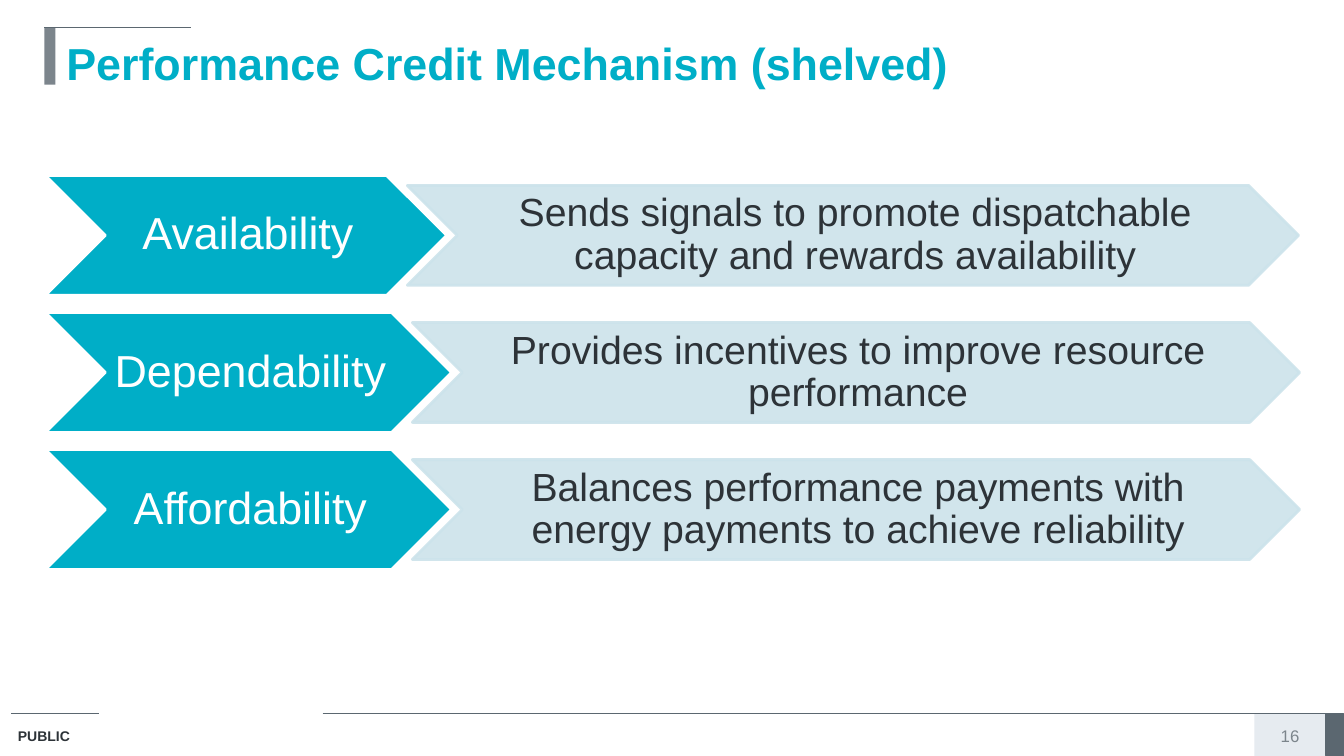
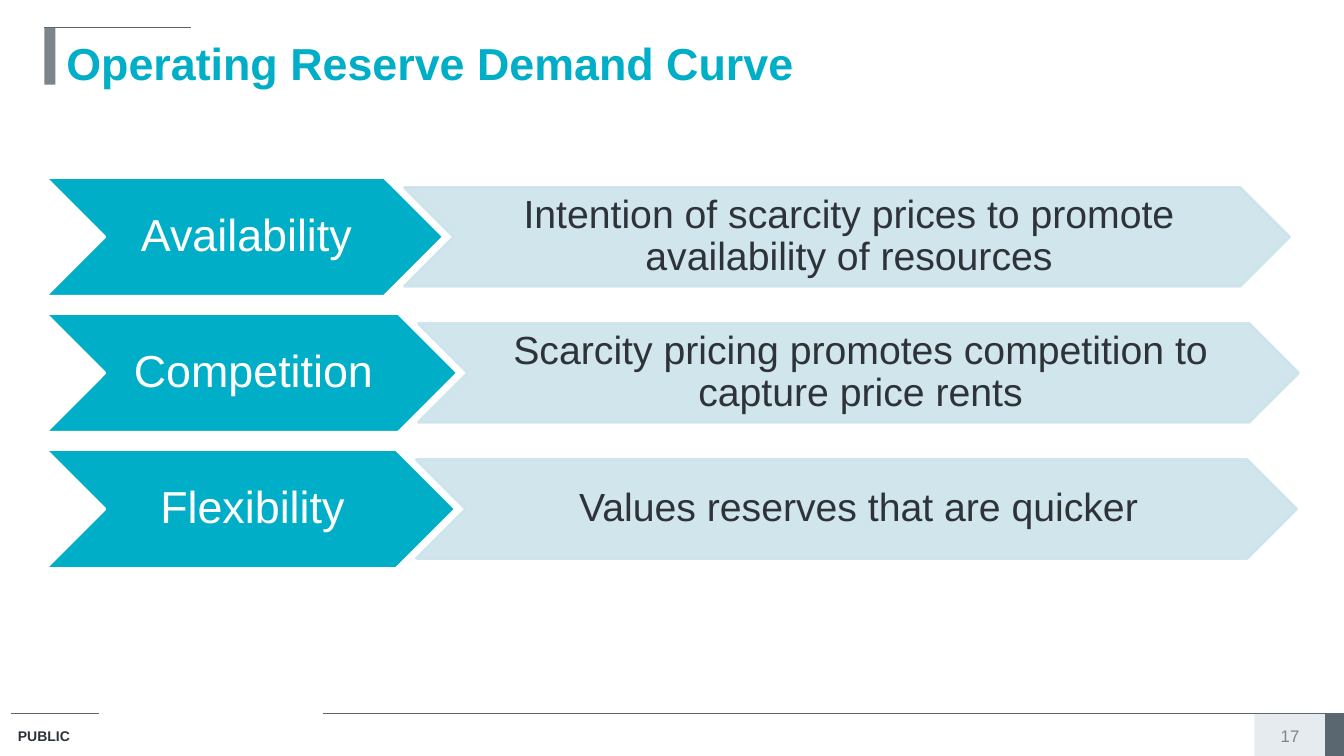
from pptx import Presentation
from pptx.dml.color import RGBColor
from pptx.enum.shapes import MSO_CONNECTOR, MSO_SHAPE
from pptx.enum.text import MSO_ANCHOR, PP_ALIGN
from pptx.oxml.ns import qn
from pptx.util import Pt
from lxml import etree

RECT, CHEV = MSO_SHAPE.RECTANGLE, MSO_SHAPE.CHEVRON
LINE = MSO_CONNECTOR.STRAIGHT
TOP, MID = MSO_ANCHOR.TOP, MSO_ANCHOR.MIDDLE
LEFT, MIDDLE = PP_ALIGN.LEFT, PP_ALIGN.CENTER

SCALE = 9144  # 100 px to the inch
WIDE, HIGH = 1333, 750
FONT = "Arial"
TEAL, PALE, WHITE = "00AEC7", "CCE3EB", "FFFFFF"
INK, SLATE, GRAY, MIST = "2D3338", "5B6770", "7C858C", "E6EBF0"

# Each row: label, label width, detail, detail width
SLIDES = [
    ("Performance Credit Mechanism (shelved)", 16, (45, 174, 119, 136), [
        ("Availability", 398,
         "Sends signals to promote dispatchable capacity and rewards availability", 884),
        ("Dependability", 403,
         "Provides incentives to improve resource performance", 880),
        ("Affordability", 403,
         "Balances performance payments with energy payments to achieve reliability", 880),
    ]),
    ("Operating Reserve Demand Curve", 17, (45, 176, 118, 135), [
        ("Availability", 395,
         "Intention of scarcity prices to promote availability of resources", 878),
        ("Competition", 409,
         "Scarcity pricing promotes competition to capture price rents", 873),
        ("Flexibility", 407, "Values reserves that are quicker", 873),
    ]),
]


def px(n):
    return round(n * SCALE)


def color(code):
    return RGBColor.from_string(code)


def fade(shape, share):
    """Make the fill and the line of a shape partly transparent."""
    for node in shape._element.spPr.iter(qn("a:srgbClr")):
        etree.SubElement(node, qn("a:alpha")).set("val", str(share * 1000))


def write(shape, text, size, code, bold=False, align=LEFT, anchor=TOP,
          pads=(10, 5, 10, 5), lead=None):
    frame = shape.text_frame
    frame.word_wrap = True
    frame.vertical_anchor = anchor
    (frame.margin_left, frame.margin_top,
     frame.margin_right, frame.margin_bottom) = map(px, pads)
    frame.text = text
    para = frame.paragraphs[0]
    para.alignment = align
    para.line_spacing = lead
    font = para.runs[0].font
    font.name, font.size, font.bold = FONT, Pt(size), bold
    font.color.rgb = color(code)


def label(slide, box, text, size, code, **style):
    write(slide.shapes.add_textbox(*map(px, box)), text, size, code, **style)


def block(slide, kind, box, fill, edge=None, width=0.75):
    shape = slide.shapes.add_shape(kind, *map(px, box))
    shape.shadow.inherit = False
    shape.fill.solid()
    shape.fill.fore_color.rgb = color(fill)
    if edge:
        shape.line.color.rgb = color(edge)
        shape.line.width = Pt(width)
    else:
        shape.line.fill.background()
    return shape


def rule(slide, x, y, wide):
    line = slide.shapes.add_connector(LINE, px(x), px(y), px(x + wide), px(y))
    line.line.color.rgb = color(SLATE)
    line.line.width = Pt(0.75)
    etree.SubElement(line._element.spPr, qn("a:effectLst"))


def footer(slide, y, page):
    # Page tab and corner block
    high = HIGH - y
    block(slide, RECT, (1244, y, 78, high), MIST)
    block(slide, RECT, (1315, y, 18, high), SLATE, SLATE)
    # Rules on both sides of the gap
    rule(slide, 11, y, 87)
    rule(slide, 320, y, 1000)
    label(slide, (8, y + 9, 103, 28), "PUBLIC", 10, INK, bold=True)
    label(slide, (1244, y + 10, 71, 24), str(page), 12, GRAY,
          align=MIDDLE, anchor=MID)


def header(slide, x, y, text):
    block(slide, RECT, (x, y, 11, 57), GRAY)
    rule(slide, x, y, 145)
    label(slide, (x + 12, y, 1233, 57), text, 32, TEAL, bold=True,
          pads=(10, 8, 10, 5))


def arrow(slide, box, fill, edge, text, size, code):
    shape = block(slide, CHEV, box, fill, edge, 2)
    write(shape, text, size, code, align=MIDDLE, anchor=MID,
          pads=(4, 2, 0, 2), lead=0.9)
    return shape


def chain(slide, box, rows):
    """Stack rows of a label arrow and the detail arrow nested in its tip."""
    x, y, high, pitch = box
    low, lap = high - 20, 39
    for i, (name, wide, detail, span) in enumerate(rows):
        top = y + i * pitch
        arrow(slide, (x, top, wide, high), TEAL, WHITE, name, 32, WHITE)
        tail = arrow(slide, (x + wide - lap, top + 10, span, low),
                     PALE, PALE, detail, 28, INK)
        fade(tail, 90)


def main():
    deck = Presentation()
    deck.slide_width, deck.slide_height = px(WIDE), px(HIGH)
    for title, page, box, rows in SLIDES:
        slide = deck.slides.add_slide(deck.slide_layouts[6])
        footer(slide, 708, page)
        header(slide, 44, 27, title)
        chain(slide, box, rows)
    deck.save("out.pptx")


if __name__ == "__main__":
    main()
